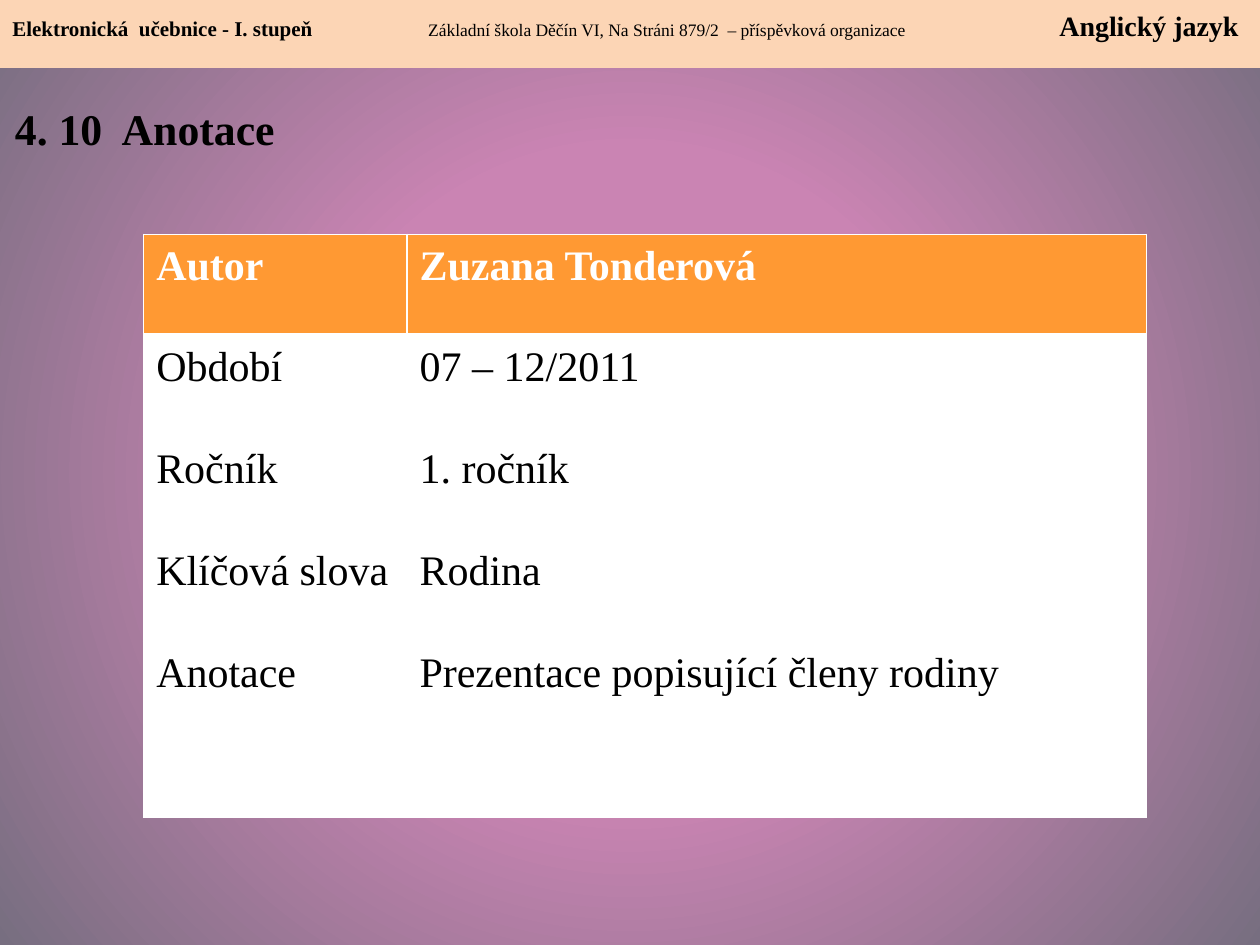
import pptx
import pptx.util
import pptx.dml.color
import pptx.enum.shapes
import pptx.enum.text
import pptx.oxml
import pptx.oxml.ns

Inches = pptx.util.Inches
RGBColor = pptx.dml.color.RGBColor
qn = pptx.oxml.ns.qn
NS = pptx.oxml.ns.nsdecls("a")

FONT = "Times New Roman"
BLACK = RGBColor(0x00, 0x00, 0x00)
WHITE = RGBColor(0xFF, 0xFF, 0xFF)
PEACH = RGBColor(0xFC, 0xD5, 0xB5)
ORANGE = RGBColor(0xFF, 0x99, 0x33)
PINK = RGBColor(0xCA, 0x84, 0xB3)
GREY = RGBColor(0x77, 0x6E, 0x80)

ROWS = [
    ("Autor", "Zuzana Tonderová"),
    ("Období", "07 – 12/2011"),
    ("Ročník", "1. ročník"),
    ("Klíčová slova", "Rodina"),
    ("Anotace", "Prezentace popisující členy rodiny"),
]
COLUMN_WIDTHS = [2.09, 5.87]
ROW_HEIGHTS = [0.8, 0.81, 0.81, 0.81, 1.4]


def style_run(r, size, bold, color=BLACK):
    r.font.name = FONT
    r.font.size = pptx.util.Pt(size)
    r.font.bold = bold
    r.font.color.rgb = color


def paint_background(s):
    fill = s.background.fill
    fill.gradient()
    for stop, position, color in zip(fill.gradient_stops, (0.41, 1), (PINK, GREY)):
        stop.position = position
        stop.color.rgb = color
    lin = next(s._element.iter(qn("a:lin")))
    lin.getparent().replace(lin, pptx.oxml.parse_xml(
        f'<a:path {NS} path="circle">'
        '<a:fillToRect l="50000" t="50000" r="50000" b="50000"/></a:path>'))


def add_header(s, left, top, width, height):
    sp = s.shapes.add_shape(pptx.enum.shapes.MSO_SHAPE.RECTANGLE,
                            Inches(left), Inches(top), Inches(width), Inches(height))
    sp.shadow.inherit = False
    sp.fill.solid()
    sp.fill.fore_color.rgb = PEACH
    sp.line.fill.background()
    tf = sp.text_frame
    tf.word_wrap = True
    tf.vertical_anchor = pptx.enum.text.MSO_ANCHOR.TOP
    tf.margin_top = Inches(0.07)
    p = tf.paragraphs[0]
    p.alignment = pptx.enum.text.PP_ALIGN.LEFT
    tabs = "".join(f'<a:tab pos="{Inches(pos)}" algn="l"/>' for pos in (3.3, 8.31))
    p._p.get_or_add_pPr().append(pptx.oxml.parse_xml(f"<a:tabLst {NS}>{tabs}</a:tabLst>"))
    for text, size, bold in (
        ("Elektronická  učebnice - I. stupeň\t", 12, True),
        ("Základní škola Děčín VI, Na Stráni 879/2  – příspěvková organizace\t", 10, False),
        ("Anglický jazyk", 16, True),
    ):
        r = p.add_run()
        r.text = text
        style_run(r, size, bold)


def add_title(s, left, top, width, height):
    sp = s.shapes.add_textbox(Inches(left), Inches(top), Inches(width), Inches(height))
    tf = sp.text_frame
    tf.word_wrap = True
    tf.margin_top = Inches(0.08)
    tf.text = "4. 10  Anotace"
    style_run(tf.paragraphs[0].runs[0], 25, True)


def set_borders(cell, bottom_width):
    tcPr = cell._tc.get_or_add_tcPr()
    for i, (side, width) in enumerate(zip("LRTB", (1, 1, 1, bottom_width))):
        tcPr.insert(i, pptx.oxml.parse_xml(
            f'<a:ln{side} {NS} w="{pptx.util.Pt(width)}"><a:solidFill>'
            f'<a:srgbClr val="{WHITE}"/></a:solidFill></a:ln{side}>'))


def add_annotation_table(s, left, top, width, height):
    table = s.shapes.add_table(len(ROWS), len(COLUMN_WIDTHS), Inches(left), Inches(top),
                               Inches(width), Inches(height)).table
    for column, column_width in zip(table.columns, COLUMN_WIDTHS):
        column.width = Inches(column_width)
    for i, (row, texts) in enumerate(zip(table.rows, ROWS)):
        row.height = Inches(ROW_HEIGHTS[i])
        header = i == 0
        for cell, text in zip(row.cells, texts):
            cell.margin_left = cell.margin_right = Inches(0.1)
            cell.margin_top = cell.margin_bottom = Inches(0.07)
            cell.fill.solid()
            cell.fill.fore_color.rgb = ORANGE if header else WHITE
            set_borders(cell, 3 if header else 1)
            cell.text_frame.text = text
            style_run(cell.text_frame.paragraphs[0].runs[0], 24, header,
                      WHITE if header else BLACK)


def main():
    prs = pptx.Presentation()
    prs.slide_width = Inches(10)
    prs.slide_height = Inches(7.5)
    s = prs.slides.add_slide(prs.slide_layouts[6])
    paint_background(s)
    add_header(s, 0, 0, 10, 0.54)
    add_annotation_table(s, 1.14, 1.86, sum(COLUMN_WIDTHS), sum(ROW_HEIGHTS))
    add_title(s, 0.02, 0.73, 3.19, 0.87)
    prs.save("out.pptx")


if __name__ == "__main__":
    main()
